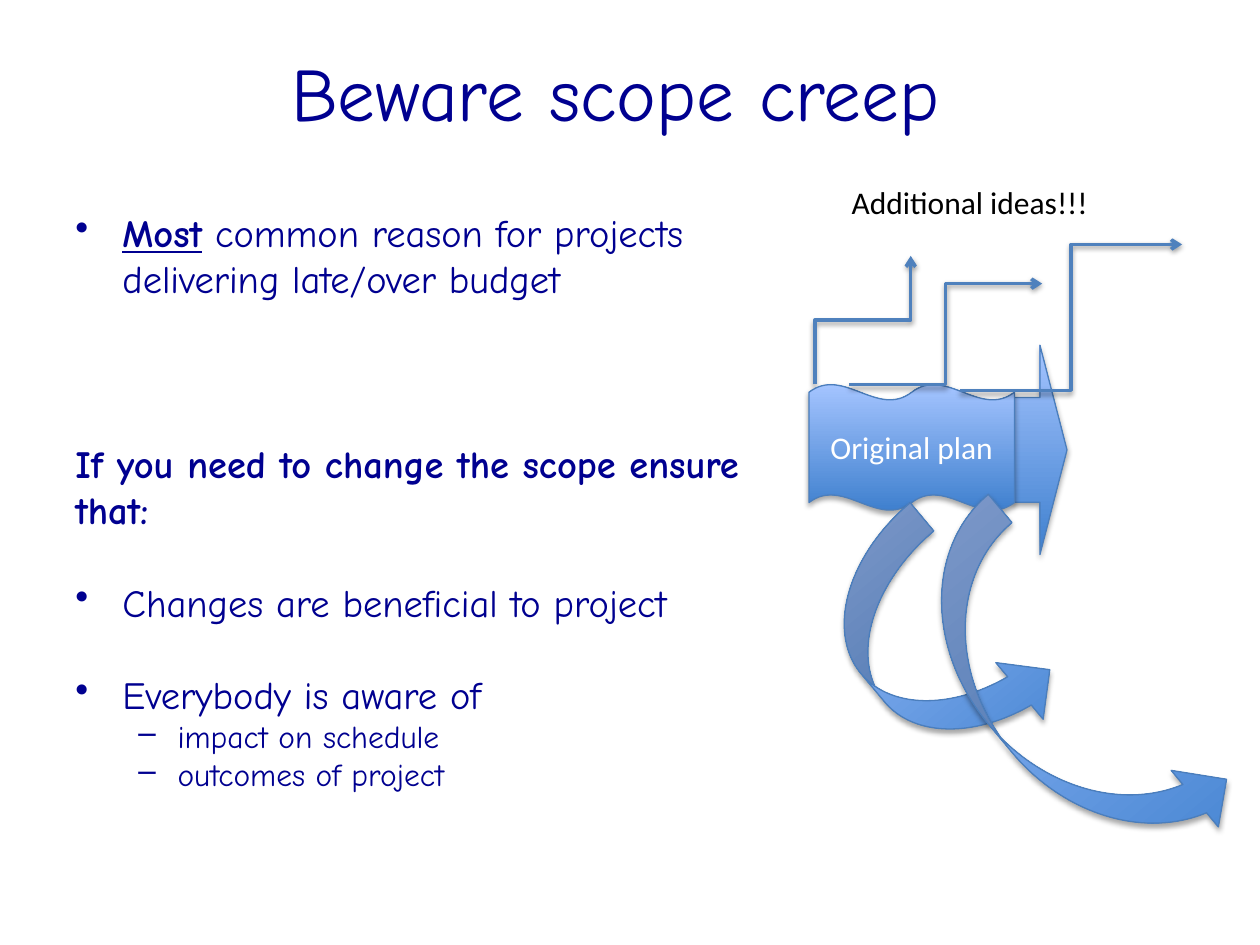
from dataclasses import dataclass

from lxml.etree import SubElement
from pptx import Presentation
from pptx.dml.color import RGBColor
from pptx.enum.shapes import MSO_CONNECTOR, MSO_SHAPE
from pptx.enum.text import MSO_ANCHOR, MSO_AUTO_SIZE, PP_ALIGN
from pptx.oxml.ns import qn
from pptx.util import Cm, Pt

COLORS = {
    "navy": "000090",
    "dark": "3F80CE",
    "light": "A4C4FF",
    "outline": "4B7EBC",
    "line": "4F81BD",
    "white": "FFFFFF",
    "black": "000000",
}
HAND = "Comic Neue"
SANS = "Calibri"


@dataclass
class Block:
    kind: MSO_SHAPE
    x: float
    y: float
    w: float
    h: float
    rotation: float = 0
    text: str = ""


@dataclass
class Detour:
    x1: float
    y1: float
    x2: float
    y2: float
    upright: bool = False


@dataclass
class Item:
    text: str
    size: int = 22
    before: float = 0
    bullet: str = ""
    margin: float = 0
    hang: float = 0
    bold: bool = False
    lead: str = ""


PLAN = [
    Block(MSO_SHAPE.RIGHT_ARROW, 20.42, 6.96, 1.09, 4.22),
    Detour(16.43, 7.75, 18.36, 5.16, upright=True),
    Block(MSO_SHAPE.DOUBLE_WAVE, 16.31, 7.75, 4.14, 2.54, text="Original plan"),
    Detour(17.12, 7.75, 21.01, 5.72),
    Detour(19.35, 7.87, 23.83, 4.93),
    Block(MSO_SHAPE.CURVED_RIGHT_ARROW, 17.37, 10.49, 2.97, 5.13, 320.1),
    Block(MSO_SHAPE.CURVED_RIGHT_ARROW, 19.94, 9.96, 2.97, 8.23, 320.1),
]
TOP = {"bullet": "•", "margin": 0.95, "hang": 0.95}
SUB = {"bullet": "–", "margin": 2.06, "hang": 0.79, "size": 18}
LINE = 26.4
ITEMS = [
    Item(" common reason for projects delivering late/over budget", lead="Most", **TOP),
    Item("If you need to change the scope ensure that:", before=3 * LINE, bold=True),
    Item("Changes are beneficial to project", before=LINE, **TOP),
    Item("Everybody is aware of", before=LINE, **TOP),
    Item("impact on schedule", **SUB),
    Item("outcomes of project", **SUB),
]


def rgb(name: str) -> RGBColor:
    return RGBColor.from_string(COLORS[name])


def set_font(p, name: str, size: float, color: str) -> None:
    p.font.name = name
    p.font.size = Pt(size)
    p.font.color.rgb = rgb(color)


def add_shadow(sp, alpha: int, dist: float) -> None:
    effects = SubElement(sp._element.spPr, qn("a:effectLst"))
    shadow = SubElement(effects, qn("a:outerShdw"), blurRad=str(Pt(3.1)),
                        dist=str(Pt(dist)), dir="5400000", rotWithShape="0")
    color = SubElement(shadow, qn("a:srgbClr"), val=COLORS["black"])
    SubElement(color, qn("a:alpha"), val=str(alpha * 1000))


def add_text(shapes, x: float, y: float, w: float, h: float):
    tf = shapes.add_textbox(Cm(x), Cm(y), Cm(w), Cm(h)).text_frame
    tf.word_wrap = True
    return tf


def draw_block(shapes, b: Block) -> None:
    sp = shapes.add_shape(b.kind, Cm(b.x), Cm(b.y), Cm(b.w), Cm(b.h))
    sp.rotation = b.rotation
    sp.fill.gradient()
    sp.fill.gradient_angle = 90
    for stop, position, color in zip(sp.fill.gradient_stops, (0, 1), ("dark", "light")):
        stop.position = position
        stop.color.rgb = rgb(color)
    sp.line.color.rgb = rgb("outline")
    sp.line.width = Pt(0.75)
    add_shadow(sp, 35, 1.8)
    if b.text:
        tf = sp.text_frame
        tf.vertical_anchor = MSO_ANCHOR.MIDDLE
        p = tf.paragraphs[0]
        p.text = b.text
        p.alignment = PP_ALIGN.CENTER
        set_font(p, SANS, 18, "white")


def draw_detour(shapes, d: Detour) -> None:
    x1, y1, x2, y2 = d.x1, d.y1, d.x2, d.y2
    if d.upright:
        cx, cy = (x1 + x2) / 2, (y1 + y2) / 2
        x1, y1, x2, y2 = cx + y1 - cy, cy - x1 + cx, cx + y2 - cy, cy - x2 + cx
    cn = shapes.add_connector(MSO_CONNECTOR.ELBOW, Cm(x1), Cm(y1), Cm(x2), Cm(y2))
    if d.upright:
        cn._element.spPr.find(qn("a:xfrm")).set("rot", "5400000")
    cn.line.color.rgb = rgb("line")
    cn.line.width = Pt(2)
    SubElement(cn.line._get_or_add_ln(), qn("a:tailEnd"), type="arrow")
    add_shadow(cn, 38, 1.6)


def write_item(p, item: Item) -> None:
    if item.lead:
        r = p.add_run()
        r.text = item.lead
        r.font.bold = True
        r.font.underline = True
    p.add_run().text = item.text
    set_font(p, HAND, item.size, "navy")
    p.font.bold = item.bold
    p.space_before = Pt(item.before)
    if item.bullet:
        pPr = p._p.get_or_add_pPr()
        pPr.set("marL", str(Cm(item.margin)))
        pPr.set("indent", str(-Cm(item.hang)))
        bullet = pPr.makeelement(qn("a:buChar"), {"char": item.bullet})
        pPr.find(qn("a:defRPr")).addprevious(bullet)


def main() -> None:
    prs = Presentation()
    prs.slide_width, prs.slide_height = Cm(25.4), Cm(19.05)
    s = prs.slides.add_slide(prs.slide_layouts[6])

    tf = add_text(s.shapes, 0.97, 0.25, 22.86, 3.18)
    tf.vertical_anchor = MSO_ANCHOR.MIDDLE
    p = tf.paragraphs[0]
    p.text = "Beware scope creep"
    p.alignment = PP_ALIGN.CENTER
    set_font(p, HAND, 43, "navy")

    tf = add_text(s.shapes, 1.27, 4.09, 14.17, 12.19)
    for i, item in enumerate(ITEMS):
        write_item(tf.add_paragraph() if i else tf.paragraphs[0], item)

    shapes = s.shapes.add_group_shape().shapes
    for part in PLAN:
        if isinstance(part, Block):
            draw_block(shapes, part)
        else:
            draw_detour(shapes, part)
    tf = add_text(shapes, 16.92, 3.56, 5.33, 1.02)
    tf.word_wrap = False
    tf.auto_size = MSO_AUTO_SIZE.SHAPE_TO_FIT_TEXT
    p = tf.paragraphs[0]
    p.text = "Additional ideas!!!"
    set_font(p, SANS, 18, "black")

    prs.save("out.pptx")


if __name__ == "__main__":
    main()
